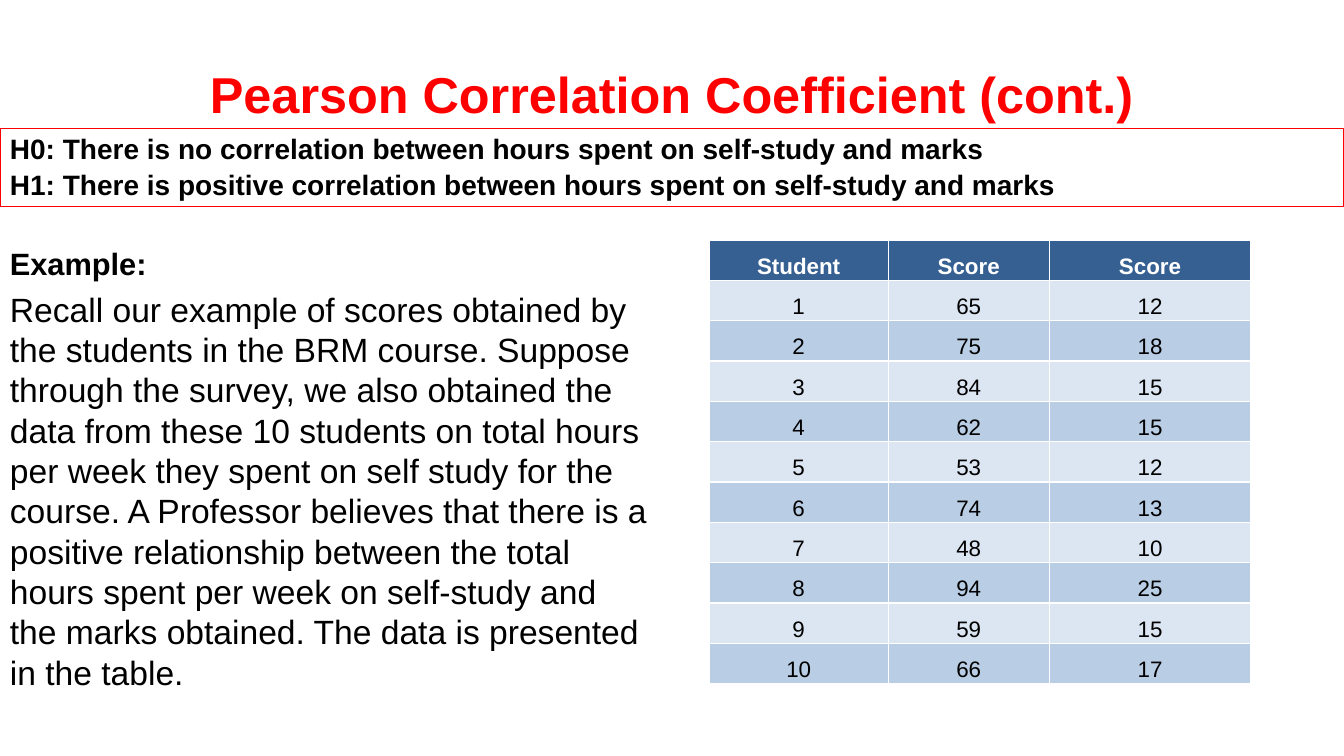
from lxml import etree
from pptx import Presentation
from pptx.dml.color import RGBColor
from pptx.enum import shapes, text
from pptx.oxml import ns
from pptx.util import Pt

COLORS = {"red": "FF0000", "black": "000000", "white": "FFFFFF",
          "header": "376092", "light": "DCE6F2", "dark": "B9CDE5"}


def color(name):
    return RGBColor.from_string(COLORS[name])


def style(paragraph, size, name="black", bold=False):
    font = paragraph.font
    font.name, font.size, font.bold = "Arial", Pt(size), bold
    font.color.rgb = color(name)


presentation = Presentation()
presentation.slide_width, presentation.slide_height = Pt(960), Pt(540)
slide = presentation.slides.add_slide(presentation.slide_layouts[6])

# Title
title = slide.shapes.add_textbox(Pt(48), Pt(21.6), Pt(864), Pt(90)).text_frame
title.word_wrap = True
title.vertical_anchor = text.MSO_ANCHOR.MIDDLE
paragraph = title.paragraphs[0]
paragraph.text = "Pearson Correlation Coefficient (cont.)"
paragraph.alignment = text.PP_ALIGN.CENTER
paragraph.space_after = Pt(6)
style(paragraph, 36, "red", True)

# Example text
example = slide.shapes.add_textbox(Pt(0), Pt(171.5), Pt(472.5), Pt(368.5)).text_frame
example.word_wrap = True
paragraph = example.paragraphs[0]
paragraph.text = "Example:"
style(paragraph, 22, bold=True)
paragraph = example.add_paragraph()
paragraph.text = (
    "Recall our example of scores obtained by the students in the BRM course. "
    "Suppose through the survey, we also obtained the data from these 10 students "
    "on total hours per week they spent on self study for the course. A Professor "
    "believes that there is a positive relationship between the total hours spent "
    "per week on self-study and the marks obtained. The data is presented in the table.")
paragraph.space_before = Pt(4.8)
style(paragraph, 24)

# Hypotheses
banner = slide.shapes.add_shape(shapes.MSO_SHAPE.RECTANGLE, Pt(0), Pt(92), Pt(960), Pt(55.5))
banner.shadow.inherit = False
banner.fill.background()
banner.line.color.rgb = color("red")
banner.line.width = Pt(0.75)
hypotheses = banner.text_frame
hypotheses.word_wrap = True
hypotheses.vertical_anchor = text.MSO_ANCHOR.BOTTOM
hypotheses.text = (
    "H0: There is no correlation between hours spent on self-study and marks\n"
    "H1: There is positive correlation between hours spent on self-study and marks")
for paragraph in hypotheses.paragraphs:
    paragraph.alignment = text.PP_ALIGN.LEFT
    paragraph.line_spacing = 0.9
    style(paragraph, 20, bold=True)
hypotheses.paragraphs[1].space_before = Pt(4)

# Score table
scores = [65, 75, 84, 62, 53, 74, 48, 94, 59, 66]
hours = [12, 18, 15, 15, 12, 13, 10, 25, 15, 17]
rows = [("Student", "Score", "Score"), *zip(range(1, 11), scores, hours)]
table = slide.shapes.add_table(len(rows), 3, Pt(506.5), Pt(171.5), Pt(387), Pt(311)).table
for column, width in zip(table.columns, (128, 115, 144)):
    column.width = Pt(width)
for r, values in enumerate(rows):
    table.rows[r].height = Pt(28.27)
    fill = "header" if r == 0 else "light" if r % 2 else "dark"
    for c, value in enumerate(values):
        cell = table.cell(r, c)
        cell.text = str(value)
        cell.vertical_anchor = text.MSO_ANCHOR.MIDDLE
        cell.margin_left = cell.margin_right = Pt(5)
        cell.margin_top = cell.margin_bottom = Pt(0)
        properties = cell._tc.get_or_add_tcPr()
        for side in ("lnL", "lnR", "lnT", "lnB"):
            border = etree.SubElement(properties, ns.qn(f"a:{side}"), w=str(Pt(1)))
            solid = etree.SubElement(border, ns.qn("a:solidFill"))
            etree.SubElement(solid, ns.qn("a:srgbClr"), val=COLORS["white"])
        cell.fill.solid()
        cell.fill.fore_color.rgb = color(fill)
        paragraph = cell.text_frame.paragraphs[0]
        paragraph.alignment = text.PP_ALIGN.CENTER
        paragraph.line_spacing = 1.5
        style(paragraph, 16, "white" if r == 0 else "black", r == 0)

presentation.save("out.pptx")
